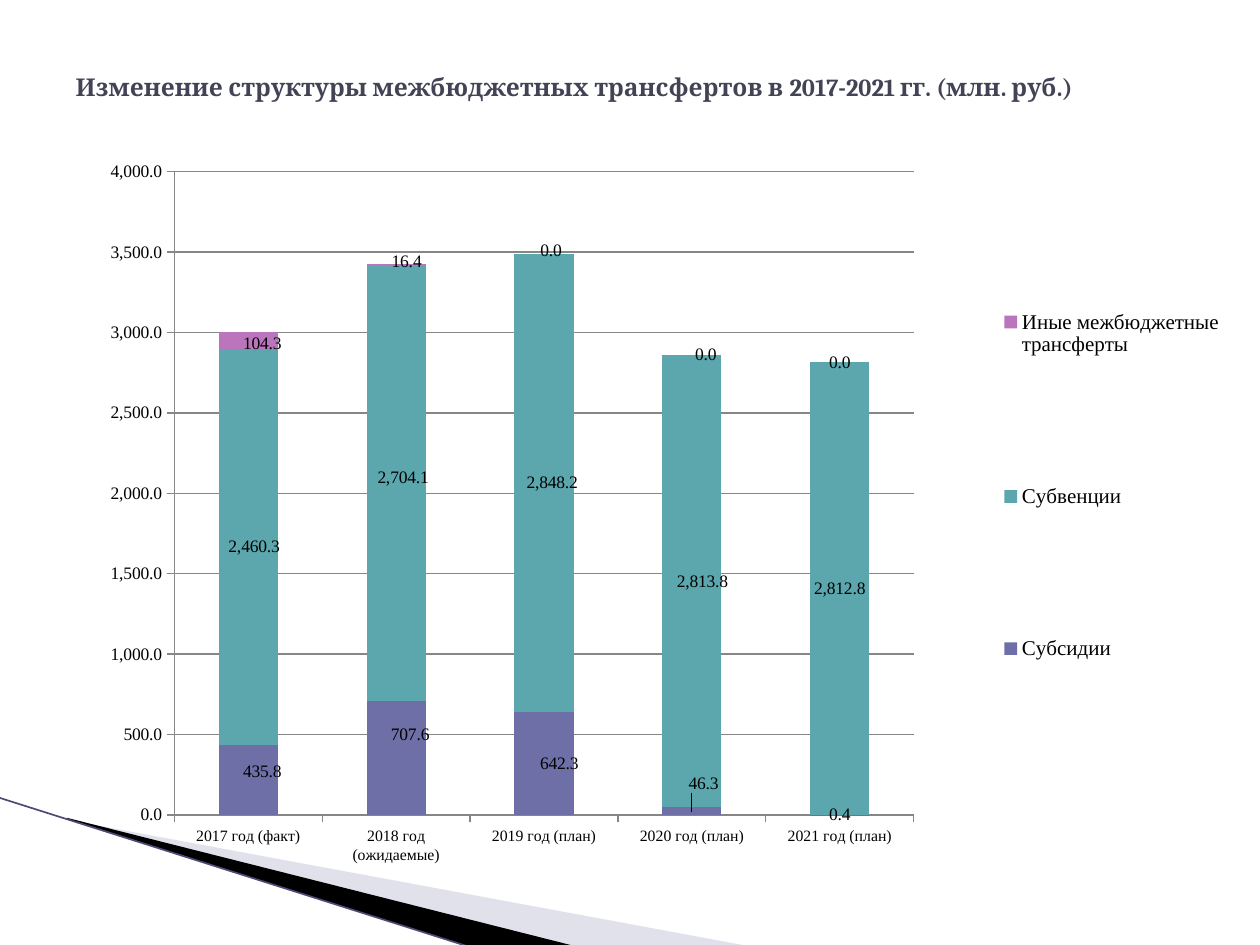
from lxml import etree
from pptx import Presentation
from pptx.chart.data import CategoryChartData
from pptx.dml.color import RGBColor
from pptx.enum.chart import XL_CHART_TYPE, XL_LEGEND_POSITION, XL_TICK_MARK
from pptx.enum.shapes import MSO_CONNECTOR
from pptx.enum.text import MSO_ANCHOR, PP_ALIGN
from pptx.oxml import parse_xml
from pptx.oxml.ns import nsdecls, qn
from pptx.util import Inches, Pt

STACKED = XL_CHART_TYPE.COLUMN_STACKED
LEGEND_RIGHT = XL_LEGEND_POSITION.RIGHT
TICK_OUTSIDE = XL_TICK_MARK.OUTSIDE
STRAIGHT = MSO_CONNECTOR.STRAIGHT
ANCHOR_MIDDLE = MSO_ANCHOR.MIDDLE
ALIGN_LEFT = PP_ALIGN.LEFT

BLACK = RGBColor(0x00, 0x00, 0x00)
TITLE_COLOR = RGBColor(0x42, 0x44, 0x56)
LAVENDER = RGBColor(0xB6, 0xB6, 0xD1)
EDGE_COLOR = RGBColor(0x4B, 0x4A, 0x78)
GRID_COLOR = RGBColor(0x86, 0x86, 0x86)

TITLE_FONT = "Cambria"
CHART_FONT = "Courier New"
LABEL_FONT = "Times New Roman"
NUMBER_FORMAT = "#,##0.0"

CATEGORIES = ["2017 год (факт)", "2018 год (ожидаемые)", "2019 год (план)",
              "2020 год (план)", "2021 год (план)"]
SERIES = [
    ("Субсидии", RGBColor(0x6E, 0x6F, 0xA6), [435.8, 707.6, 642.3, 46.3, 0.4],
     [(0.012, -0.011), (0.012, -0.032), (0.013, 0), (0.01, -0.038)]),
    ("Субвенции", RGBColor(0x5B, 0xA7, 0xAD), [2460.3, 2704.1, 2848.2, 2813.8, 2812.8],
     [(0.005, 0), (0.006, -0.008), (0.007, 0), (0.009, 0)]),
    ("Иные межбюджетные трансферты", RGBColor(0xBB, 0x75, 0xBD), [104.3, 16.4, 0, 0, 0],
     [(0.012, 0.004), (0.009, -0.005), (0.006, -0.004), (0.012, 0)]),
]


def style_font(font, name, size, color=BLACK):
    """Set the typeface, point size and colour of a font."""
    font.name = name
    font.size = Pt(size)
    font.color.rgb = color


def manual_layout(**settings):
    """Return a chart layout element holding the given settings in order."""
    layout = parse_xml(f"<c:layout {nsdecls('c')}><c:manualLayout/></c:layout>")
    for name, value in settings.items():
        etree.SubElement(layout[0], qn(f"c:{name}")).set("val", str(value))
    return layout


def add_wedge(slide, points, color, opacity=100):
    """Draw one filled outline through points given in inches."""
    corners = [(Inches(x), Inches(y)) for x, y in points]
    builder = slide.shapes.build_freeform(*corners[0])
    builder.add_line_segments(corners[1:], close=True)
    shape = builder.convert_to_shape()
    shape.shadow.inherit = False
    shape.fill.solid()
    shape.fill.fore_color.rgb = color
    shape.line.fill.background()
    if opacity < 100:
        color_element = shape.fill._xPr.find(qn("a:solidFill"))[0]
        etree.SubElement(color_element, qn("a:alpha")).set("val", str(opacity * 1000))


def add_corner(slide, left, top, width, height):
    """Draw the wedges and the edge line in the bottom corner box."""
    right, bottom = left + width, top + height
    add_wedge(slide, [(left + 0.56, top + 0.18), (right, bottom),
                      (left + 4.57, bottom), (left + 0.56, top + 0.17)], LAVENDER, 40)
    add_wedge(slide, [(left + 0.54, top + 0.16), (left + 4.58, bottom),
                      (left + 3.73, bottom), (left + 0.55, top + 0.17)], BLACK)
    edge = slide.shapes.add_connector(STRAIGHT, Inches(left), Inches(top),
                                      Inches(left + 3.72), Inches(bottom))
    edge.line.color.rgb = EDGE_COLOR
    edge.line.width = Pt(0.95)
    etree.SubElement(edge._element.spPr, qn("a:effectLst"))


def add_title(slide, left, top, width, height):
    """Place and format the title placeholder."""
    title = slide.shapes.title
    title.left, title.top = Inches(left), Inches(top)
    title.width, title.height = Inches(width), Inches(height)
    frame = title.text_frame
    frame.word_wrap = True
    frame.vertical_anchor = ANCHOR_MIDDLE
    paragraph = frame.paragraphs[0]
    paragraph.alignment = ALIGN_LEFT
    run = paragraph.add_run()
    run.text = "Изменение структуры межбюджетных трансфертов в 2017-2021 гг. (млн. руб.)"
    style_font(run.font, TITLE_FONT, 14, TITLE_COLOR)
    run.font.bold = True


def format_axis(axis, size):
    """Give an axis its ticks, line and label font."""
    axis.major_tick_mark = TICK_OUTSIDE
    axis.format.line.color.rgb = GRID_COLOR
    style_font(axis.tick_labels.font, LABEL_FONT, size)


def format_series(series, color, offsets):
    """Colour a series and shift its value labels by the given offsets."""
    series.format.fill.solid()
    series.format.fill.fore_color.rgb = color
    labels = series.data_labels
    labels.show_value = True
    labels.number_format = NUMBER_FORMAT
    labels.number_format_is_linked = False
    style_font(labels.font, LABEL_FONT, 10)
    for index, (x, y) in enumerate(offsets):
        style_font(series.points[index].data_label.font, LABEL_FONT, 10)
        label = labels._element.findall(qn("c:dLbl"))[index]
        label.insert(1, manual_layout(x=x, y=y))


def add_transfer_chart(slide, left, top, width, height):
    """Add the stacked column chart of transfers by year."""
    data = CategoryChartData(number_format=NUMBER_FORMAT)
    data.categories = CATEGORIES
    for name, _, values, _ in SERIES:
        data.add_series(name, values)
    chart = slide.shapes.add_chart(STACKED, Inches(left), Inches(top),
                                   Inches(width), Inches(height), data).chart
    chart.has_title = False
    style_font(chart.font, CHART_FONT, 18)
    plot = chart.plots[0]
    plot.gap_width, plot.overlap = 150, 100
    plot.vary_by_categories = False
    for series, (_, color, _, offsets) in zip(plot.series, SERIES):
        format_series(series, color, offsets)
    format_axis(chart.category_axis, 9)
    value_axis = chart.value_axis
    format_axis(value_axis, 10)
    value_axis.minimum_scale, value_axis.maximum_scale = 0, 4000
    value_axis.major_unit = 500
    value_axis.tick_labels.number_format = NUMBER_FORMAT
    value_axis.tick_labels.number_format_is_linked = False
    value_axis.major_gridlines.format.line.color.rgb = GRID_COLOR
    chart.has_legend = True
    legend = chart.legend
    legend.position = LEGEND_RIGHT
    legend.include_in_layout = False
    style_font(legend.font, LABEL_FONT, 12)
    for layout in legend._element.findall(qn("c:layout")):
        legend._element.remove(layout)
    legend._element.insert(1, manual_layout(xMode="edge", yMode="edge",
                                            x=0.79, y=0.05, w=0.21, h=0.84))
    plot_area = chart._chartSpace.chart.plotArea
    for layout in plot_area.findall(qn("c:layout")):
        plot_area.remove(layout)
    plot_area.insert(0, manual_layout(layoutTarget="inner", xMode="edge", yMode="edge",
                                      x=0.095, y=0.037, w=0.631, h=0.888))


def main():
    """Build the slide and save the presentation."""
    presentation = Presentation()
    presentation.slide_width, presentation.slide_height = Inches(10), Inches(7.5)
    slide = presentation.slides.add_slide(presentation.slide_layouts[5])
    add_corner(slide, -0.01, 6.33, 5.96, 1.18)
    add_transfer_chart(slide, 0.5, 1.15, 9.3, 5.75)
    add_title(slide, 0.5, 0.3, 9, 0.77)
    presentation.save("out.pptx")


if __name__ == "__main__":
    main()
